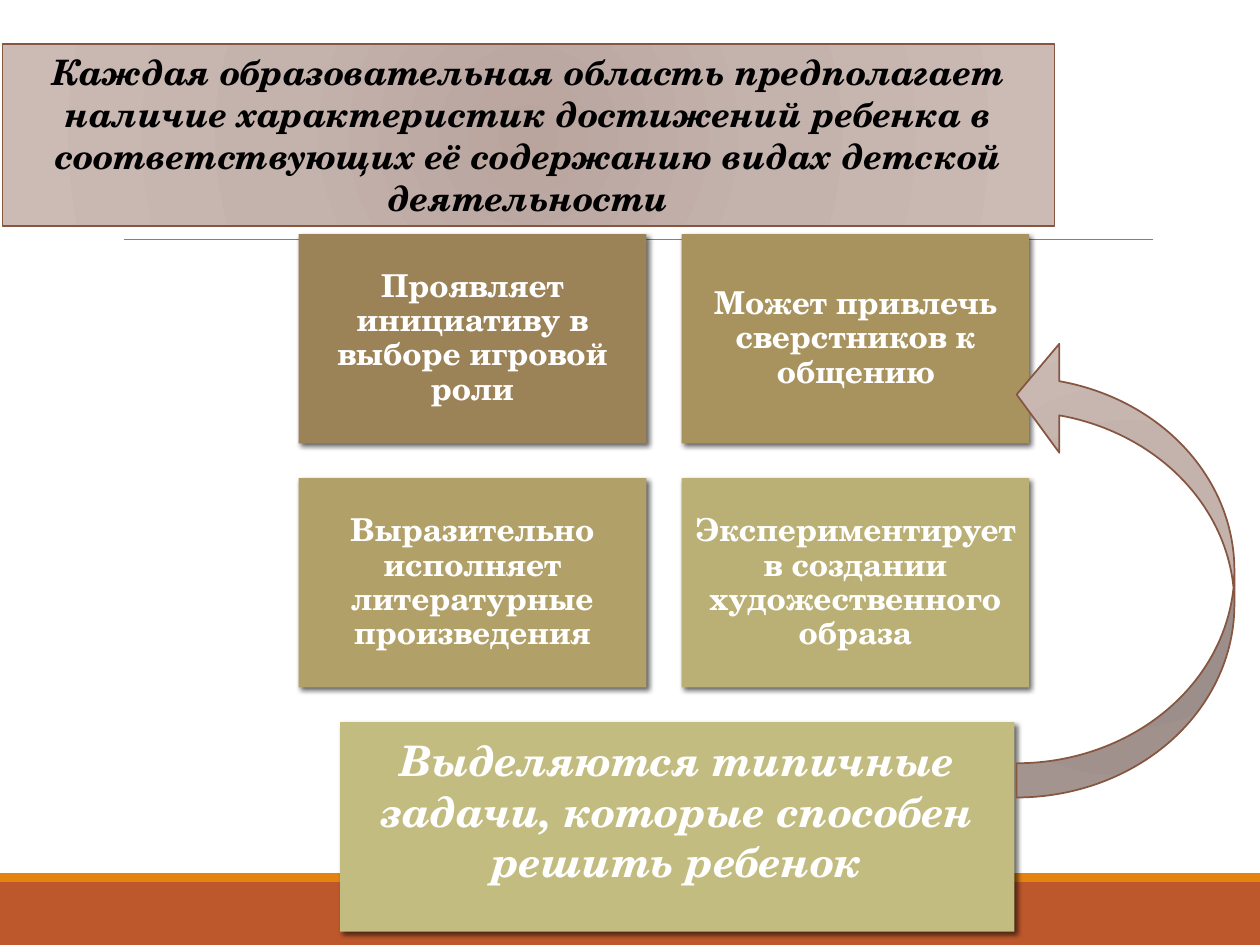
from dataclasses import dataclass

from lxml.etree import SubElement
from pptx import Presentation
from pptx.dml.color import RGBColor
from pptx.enum.shapes import MSO_CONNECTOR, MSO_SHAPE
from pptx.enum.text import MSO_ANCHOR, MSO_AUTO_SIZE, PP_ALIGN
from pptx.oxml import parse_xml
from pptx.oxml.ns import nsdecls, qn
from pptx.util import Cm, Pt

FONT = "TeX Gyre Schola"
WHITE = RGBColor(0xFF, 0xFF, 0xFF)
BLACK = RGBColor(0x00, 0x00, 0x00)
GREY = RGBColor(0x80, 0x80, 0x80)
RUST = RGBColor(0xBD, 0x58, 0x2C)
ORANGE = RGBColor(0xE4, 0x83, 0x12)
BROWN = RGBColor(0x86, 0x56, 0x40)
OLIVE = RGBColor(0xC2, 0xBC, 0x80)
MAUVE_STOPS = (
    (0, RGBColor(0xB9, 0xA4, 0x9E)),
    (45, RGBColor(0xC4, 0xB2, 0xAD)),
    (100, RGBColor(0xCC, 0xBA, 0xB5)),
)

GRID_LEFT, GRID_TOP = 6.02, 4.72
CARD_W, CARD_H = 7.01, 4.22
STEP_X, STEP_Y = 7.72, 4.92
COLUMNS = 2


@dataclass
class Card:
    text: str
    color: RGBColor


@dataclass
class TextStyle:
    size: int
    color: RGBColor = WHITE
    italic: bool = False
    spacing: float = 1.0
    inset: float = 0.18
    anchor: MSO_ANCHOR = MSO_ANCHOR.MIDDLE


CARDS = [
    Card("Проявляет инициативу в выборе игровой роли", RGBColor(0x9B, 0x83, 0x57)),
    Card("Может привлечь сверстников к общению", RGBColor(0xA8, 0x93, 0x5E)),
    Card("Выразительно исполняет литературные произведения", RGBColor(0xB1, 0xA1, 0x69)),
    Card("Экспериментирует в создании художественного образа", RGBColor(0xBA, 0xAF, 0x74)),
]


def add_rect(s, x: float, y: float, w: float, h: float, color: RGBColor):
    sp = s.shapes.add_shape(MSO_SHAPE.RECTANGLE, Cm(x), Cm(y), Cm(w), Cm(h))
    sp.fill.solid()
    sp.fill.fore_color.rgb = color
    sp.line.fill.background()
    sp.shadow.inherit = False
    return sp


def add_shadow(sp) -> None:
    effects = sp._element.spPr.find(qn("a:effectLst"))
    shadow = SubElement(effects, qn("a:outerShdw"), blurRad=str(Pt(3)),
                        dist=str(Pt(2)), dir="2700000", rotWithShape="0")
    color = SubElement(shadow, qn("a:srgbClr"), val=str(BLACK))
    SubElement(color, qn("a:alpha"), val="60000")


def set_text(sp, text: str, style: TextStyle) -> None:
    tf = sp.text_frame
    tf.word_wrap = True
    tf.auto_size = MSO_AUTO_SIZE.NONE
    tf.vertical_anchor = style.anchor
    tf.margin_left = tf.margin_right = Cm(style.inset)
    tf.margin_top = tf.margin_bottom = Cm(style.inset)
    p = tf.paragraphs[0]
    p.alignment = PP_ALIGN.CENTER
    p.line_spacing = style.spacing
    r = p.add_run()
    r.text = text
    r.font.name = FONT
    r.font.size = Pt(style.size)
    r.font.bold = True
    r.font.italic = style.italic
    r.font.color.rgb = style.color


def add_card(s, x: float, y: float, w: float, card: Card, style: TextStyle) -> None:
    sp = add_rect(s, x, y, w, CARD_H, card.color)
    add_shadow(sp)
    set_text(sp, card.text, style)


def set_mauve(sp) -> None:
    sp.line.color.rgb = BROWN
    sp.line.width = Pt(1)
    stops = "".join(
        f'<a:gs pos="{pos * 1000}"><a:srgbClr val="{color}"/></a:gs>'
        for pos, color in MAUVE_STOPS
    )
    grad = parse_xml(
        f'<a:gradFill {nsdecls("a")} rotWithShape="1"><a:gsLst>{stops}</a:gsLst>'
        '<a:path path="circle">'
        '<a:fillToRect l="100000" t="100000" r="100000" b="100000"/>'
        '</a:path></a:gradFill>'
    )
    sp._element.spPr.find(qn("a:ln")).addprevious(grad)


def add_footer_and_rule(s) -> None:
    add_rect(s, 0, 17.78, 25.4, 1.27, RUST)
    add_rect(s, 0, 17.6, 25.4, 0.18, ORANGE)
    rule = s.shapes.add_connector(MSO_CONNECTOR.STRAIGHT,
                                  Cm(2.49), Cm(4.83), Cm(23.24), Cm(4.83))
    rule.line.color.rgb = GREY
    rule.line.width = Pt(0.5)
    SubElement(rule._element.spPr, qn("a:effectLst"))


def place_title(s, text: str) -> None:
    sp = s.shapes.title
    sp.left, sp.top, sp.width, sp.height = Cm(0.05), Cm(0.89), Cm(21.21), Cm(3.66)
    sp._element.spPr.append(parse_xml(
        f'<a:prstGeom {nsdecls("a")} prst="roundRect"><a:avLst/></a:prstGeom>'))
    set_mauve(sp)
    set_text(sp, text, TextStyle(20, BLACK, italic=True, inset=0.25))
    s.shapes._spTree.append(sp._element)


def add_return_arrow(s) -> None:
    sp = s.shapes.add_shape(MSO_SHAPE.CURVED_UP_ARROW,
                            Cm(18.08), Cm(9.27), Cm(9.22), Cm(4.39))
    sp.rotation = 270
    for i, value in enumerate((0.157, 0.5, 0.196)):
        sp.adjustments[i] = value
    sp.shadow.inherit = False
    set_mauve(sp)


def main() -> None:
    prs = Presentation()
    prs.slide_width, prs.slide_height = Cm(25.4), Cm(19.05)
    s = prs.slides.add_slide(prs.slide_layouts[5])
    add_footer_and_rule(s)
    for i, card in enumerate(CARDS):
        row, col = divmod(i, COLUMNS)
        add_card(s, GRID_LEFT + col * STEP_X, GRID_TOP + row * STEP_Y, CARD_W,
                 card, TextStyle(18, spacing=0.9))
    summary = Card("Выделяются типичные задачи, которые способен решить ребенок", OLIVE)
    add_card(s, 6.86, GRID_TOP + 2 * STEP_Y, 13.59, summary,
             TextStyle(24, italic=True, inset=0.25, anchor=MSO_ANCHOR.TOP))
    place_title(s, "Каждая образовательная область предполагает наличие "
                   "характеристик достижений ребенка в соответствующих её "
                   "содержанию видах детской деятельности")
    add_return_arrow(s)
    prs.save("out.pptx")


if __name__ == "__main__":
    main()
